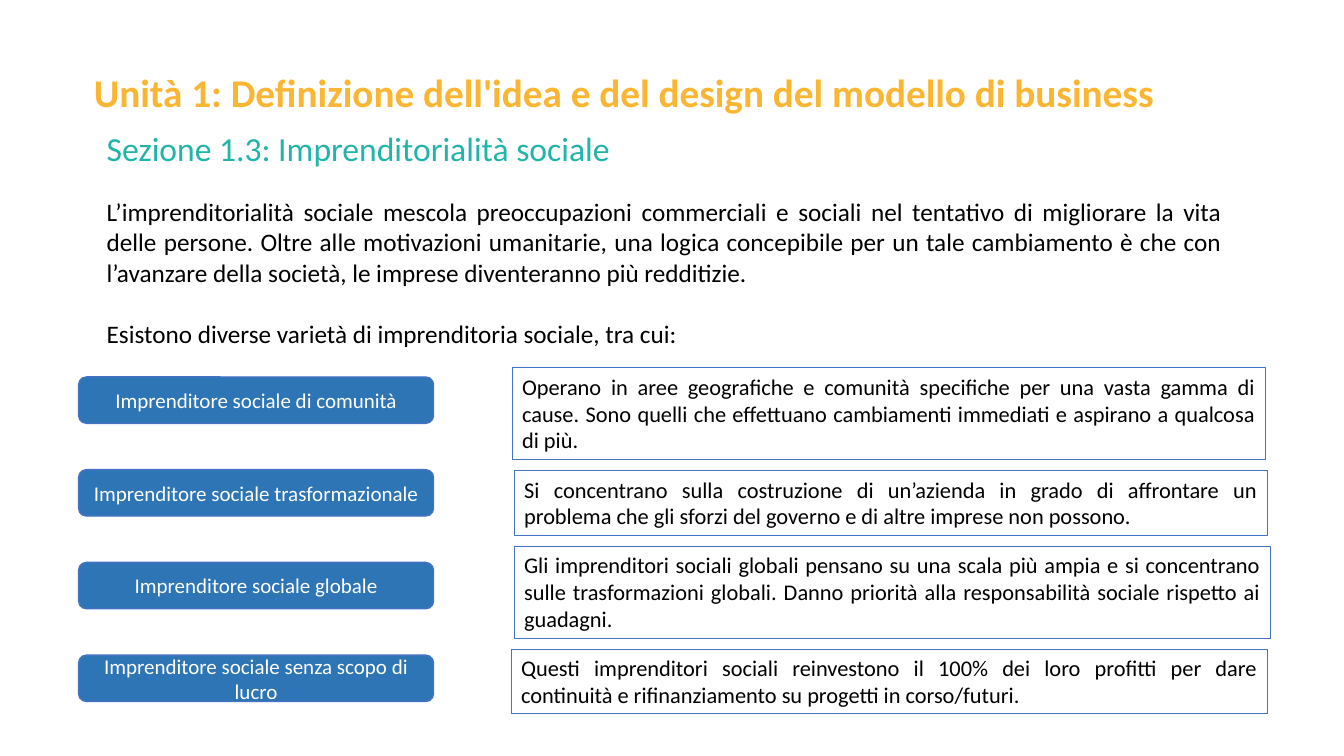
from dataclasses import dataclass
from pptx import Presentation
from pptx.dml.color import RGBColor
from pptx.enum.shapes import MSO_SHAPE
from pptx.enum.text import MSO_ANCHOR, MSO_AUTO_SIZE, PP_ALIGN
from pptx.util import Pt

RECT, ROUND = MSO_SHAPE.RECTANGLE, MSO_SHAPE.ROUNDED_RECTANGLE
LEFT, CENTER, JUSTIFY = PP_ALIGN.LEFT, PP_ALIGN.CENTER, PP_ALIGN.JUSTIFY
TOP, MIDDLE = MSO_ANCHOR.TOP, MSO_ANCHOR.MIDDLE
GROW, FIXED = MSO_AUTO_SIZE.SHAPE_TO_FIT_TEXT, MSO_AUTO_SIZE.NONE

# Content
TITLE = "Unità 1: Definizione dell'idea e del design del modello di business"
SECTION = "Sezione 1.3: Imprenditorialità sociale"
INTRO = [
    "L’imprenditorialità sociale mescola preoccupazioni commerciali e sociali nel tentativo di "
    "migliorare la vita delle persone. Oltre alle motivazioni umanitarie, una logica concepibile "
    "per un tale cambiamento è che con l’avanzare della società, le imprese diventeranno più "
    "redditizie.",
    "Esistono diverse varietà di imprenditoria sociale, tra cui:",
]
# Label, description, then left, width and height of the description box
KINDS = [
    ("Imprenditore sociale di comunità",
     "Operano in aree geografiche e comunità specifiche per una vasta gamma di cause. Sono quelli "
     "che effettuano cambiamenti immediati e aspirano a qualcosa di più.", 508, 747, 91),
    ("Imprenditore sociale trasformazionale",
     "Si concentrano sulla costruzione di un’azienda in grado di affrontare un problema che gli "
     "sforzi del governo e di altre imprese non possono.", 510, 747, 64),
    ("Imprenditore sociale globale",
     "Gli imprenditori sociali globali pensano su una scala più ampia e si concentrano sulle "
     "trasformazioni globali. Danno priorità alla responsabilità sociale rispetto ai guadagni.",
     510, 750, 91),
    ("Imprenditore sociale senza scopo di lucro",
     "Questi imprenditori sociali reinvestono il 100% dei loro profitti per dare continuità e "
     "rifinanziamento su progetti in corso/futuri.", 507, 750, 64),
]


@dataclass(frozen=True)
class Theme:
    font: str = "Calibri"
    gold: str = "FAB632"
    teal: str = "21B4A9"
    blue: str = "2E75B6"
    edge: str = "4472C4"
    black: str = "000000"
    white: str = "FFFFFF"
    title: int = 28
    section: int = 24
    body: int = 18
    note: int = 16
    label: int = 15


THEME = Theme()
PX = 9144  # 100 px to the inch
LABEL_X, LABEL_Y, LABEL_W, LABEL_H, PITCH = 78, 374, 352, 46, 92
NOTE_Y, NOTE_GAP = 365, 11


def px(*nums):
    return [n * PX for n in nums]


def write(shape, lines, size, color, align=LEFT, bold=False, anchor=TOP, fit=GROW, gap=0):
    frame = shape.text_frame
    frame.text = "\n".join(lines)
    for key, val in {"word_wrap": True, "auto_size": fit, "vertical_anchor": anchor}.items():
        setattr(frame, key, val)
    look = {"name": THEME.font, "size": Pt(size), "bold": bold}
    for i, para in enumerate(frame.paragraphs):
        para.alignment = align
        para.space_before = Pt(gap if i else 0)
        for run in para.runs:
            for key, val in look.items():
                setattr(run.font, key, val)
            run.font.color.rgb = RGBColor.from_string(color)


def panel(slide, kind, box, weight, fill=None):
    shape = slide.shapes.add_shape(kind, *px(*box))
    shape.shadow.inherit = False
    shape.line.color.rgb = RGBColor.from_string(THEME.edge)
    shape.line.width = Pt(weight)
    if fill:
        shape.fill.solid()
        shape.fill.fore_color.rgb = RGBColor.from_string(fill)
    else:
        shape.fill.background()
    return shape


def main():
    deck = Presentation()
    deck.slide_width, deck.slide_height = px(1333, 750)
    slide = deck.slides.add_slide(deck.slide_layouts[5])

    # Headings and introduction
    title = slide.shapes.title
    title.left, title.top, title.width, title.height = px(83, 63, 1111, 57)
    write(title, [TITLE], THEME.title, THEME.gold, bold=True)
    section = slide.shapes.add_textbox(*px(96, 122, 841, 50))
    write(section, [SECTION], THEME.section, THEME.teal)
    intro = slide.shapes.add_textbox(*px(96, 190, 1126, 162))
    write(intro, INTRO, THEME.body, THEME.black, JUSTIFY, gap=22)

    # Labels at an equal pitch, descriptions stacked with an equal gap
    top = NOTE_Y
    for i, (name, text, left, width, height) in enumerate(KINDS):
        box = LABEL_X, LABEL_Y + i * PITCH, LABEL_W, LABEL_H
        label = panel(slide, ROUND, box, 1, THEME.blue)
        write(label, [name], THEME.label, THEME.white, CENTER, anchor=MIDDLE, fit=FIXED)
        note = panel(slide, RECT, (left, top, width, height), 0.75)
        write(note, [text], THEME.note, THEME.black, JUSTIFY)
        top += height + NOTE_GAP

    deck.save("out.pptx")


if __name__ == "__main__":
    main()
